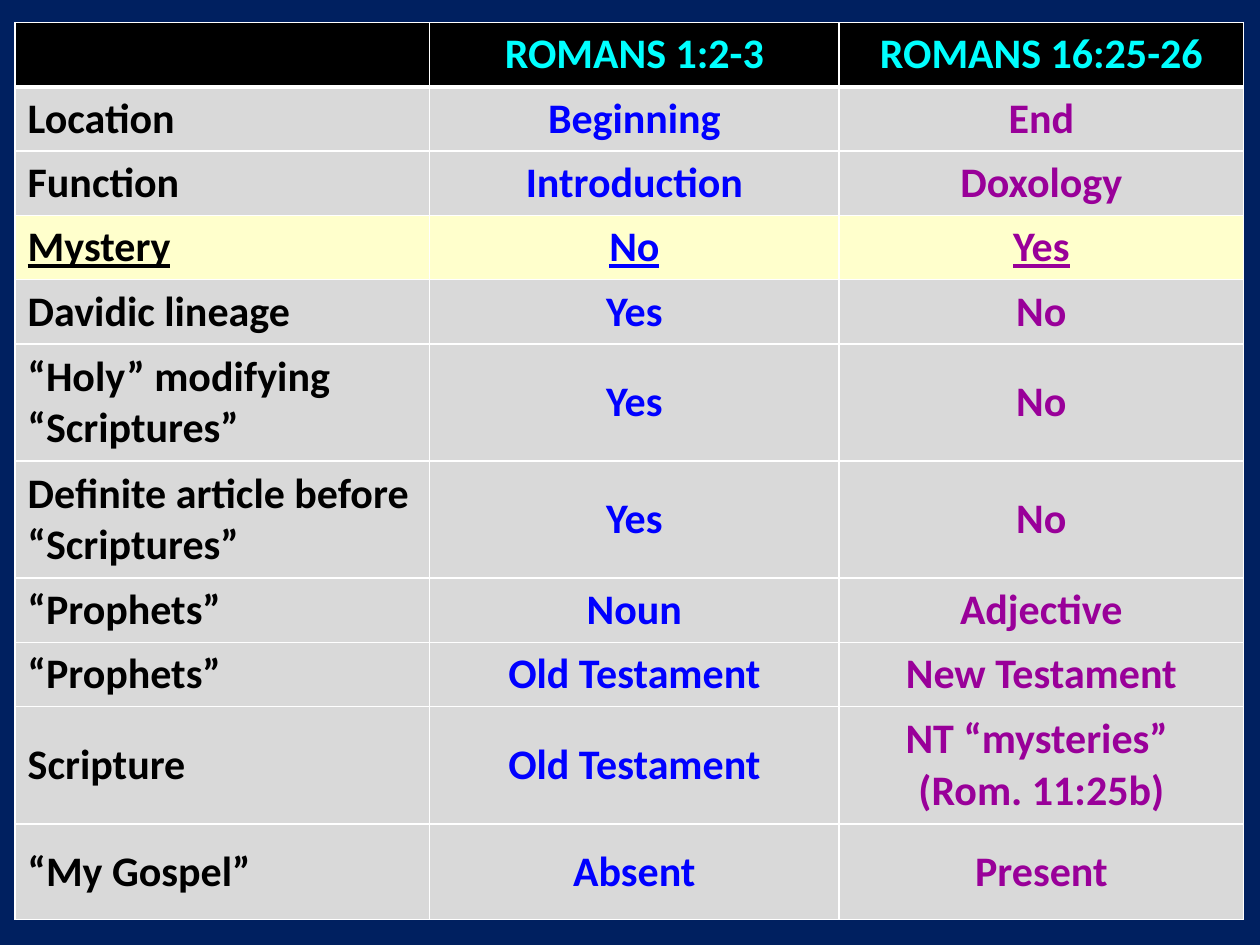
from lxml.etree import SubElement
from pptx import Presentation
from pptx.dml.color import RGBColor
from pptx.enum.text import MSO_ANCHOR as Anchor, PP_ALIGN as Align
from pptx.oxml.ns import qn
from pptx.util import Inches, Pt

NAVY = RGBColor(0x00, 0x20, 0x60)
BLACK = RGBColor(0x00, 0x00, 0x00)
WHITE = RGBColor(0xFF, 0xFF, 0xFF)
CYAN = RGBColor(0x00, 0xFF, 0xFF)
BLUE = RGBColor(0x00, 0x00, 0xFF)
PURPLE = RGBColor(0x99, 0x00, 0x99)
GREY = RGBColor(0xD9, 0xD9, 0xD9)
CREAM = RGBColor(0xFF, 0xFF, 0xCC)

ROWS = [
    ("", "ROMANS 1:2-3", "ROMANS 16:25-26"),
    ("Location", "Beginning", "End"),
    ("Function", "Introduction", "Doxology"),
    ("Mystery", "No", "Yes"),
    ("Davidic lineage", "Yes", "No"),
    ("“Holy” modifying “Scriptures”", "Yes", "No"),
    ("Definite article before “Scriptures”", "Yes", "No"),
    ("“Prophets”", "Noun", "Adjective"),
    ("“Prophets”", "Old Testament", "New Testament"),
    ("Scripture", "Old Testament", "NT “mysteries” \n(Rom. 11:25b)"),
    ("“My Gospel”", "Absent", "Present"),
]
HIGHLIGHT = "Mystery"
COLUMN_WIDTHS = [3.29, 3.25, 3.21]
COLUMN_COLORS = [BLACK, BLUE, PURPLE]
LINE_HEIGHT = 0.51
TALL_HEIGHTS = {5: 0.93, 6: 0.93, 9: 0.93, 10: 0.76}


def set_borders(cell, top, bottom):
    properties = cell._tc.get_or_add_tcPr()
    for side, width in {"L": 1, "R": 1, "T": top, "B": bottom}.items():
        line = SubElement(properties, qn(f"a:ln{side}"), w=str(Pt(width)))
        fill = SubElement(line, qn("a:solidFill"))
        SubElement(fill, qn("a:srgbClr"), val=str(WHITE))


def set_fill(target, color):
    target.fill.solid()
    target.fill.fore_color.rgb = color


def write_cell(cell, text, align, color, underline):
    cell.text = text
    font_format = {"name": "Calibri", "size": Pt(24), "bold": True, "underline": underline}
    for para in cell.text_frame.paragraphs:
        para.alignment = align
        for span in para.runs:
            for name, value in font_format.items():
                setattr(span.font, name, value)
            span.font.color.rgb = color


def main():
    deck = Presentation()
    deck.slide_width, deck.slide_height = Inches(10), Inches(7.5)
    page = deck.slides.add_slide(deck.slide_layouts[6])
    set_fill(page.background, NAVY)

    heights = [TALL_HEIGHTS.get(index, LINE_HEIGHT) for index in range(len(ROWS))]
    table = page.shapes.add_table(
        len(ROWS), len(COLUMN_WIDTHS), Inches(0.12), Inches(0.18),
        Inches(sum(COLUMN_WIDTHS)), Inches(sum(heights)),
    ).table
    for column, width in zip(table.columns, COLUMN_WIDTHS):
        column.width = Inches(width)

    for row_index, texts in enumerate(ROWS):
        table.rows[row_index].height = Inches(heights[row_index])
        header = row_index == 0
        marked = texts[0] == HIGHLIGHT
        fill = BLACK if header else CREAM if marked else GREY
        for column_index, text in enumerate(texts):
            cell = table.cell(row_index, column_index)
            cell.vertical_anchor = Anchor.TOP if header else Anchor.MIDDLE
            set_borders(cell, top=3 if row_index == 1 else 1, bottom=3 if header else 1)
            set_fill(cell, fill)
            align = Align.CENTER if column_index else Align.LEFT
            color = CYAN if header else COLUMN_COLORS[column_index]
            write_cell(cell, text, align, color, marked)

    deck.save("out.pptx")


if __name__ == "__main__":
    main()
